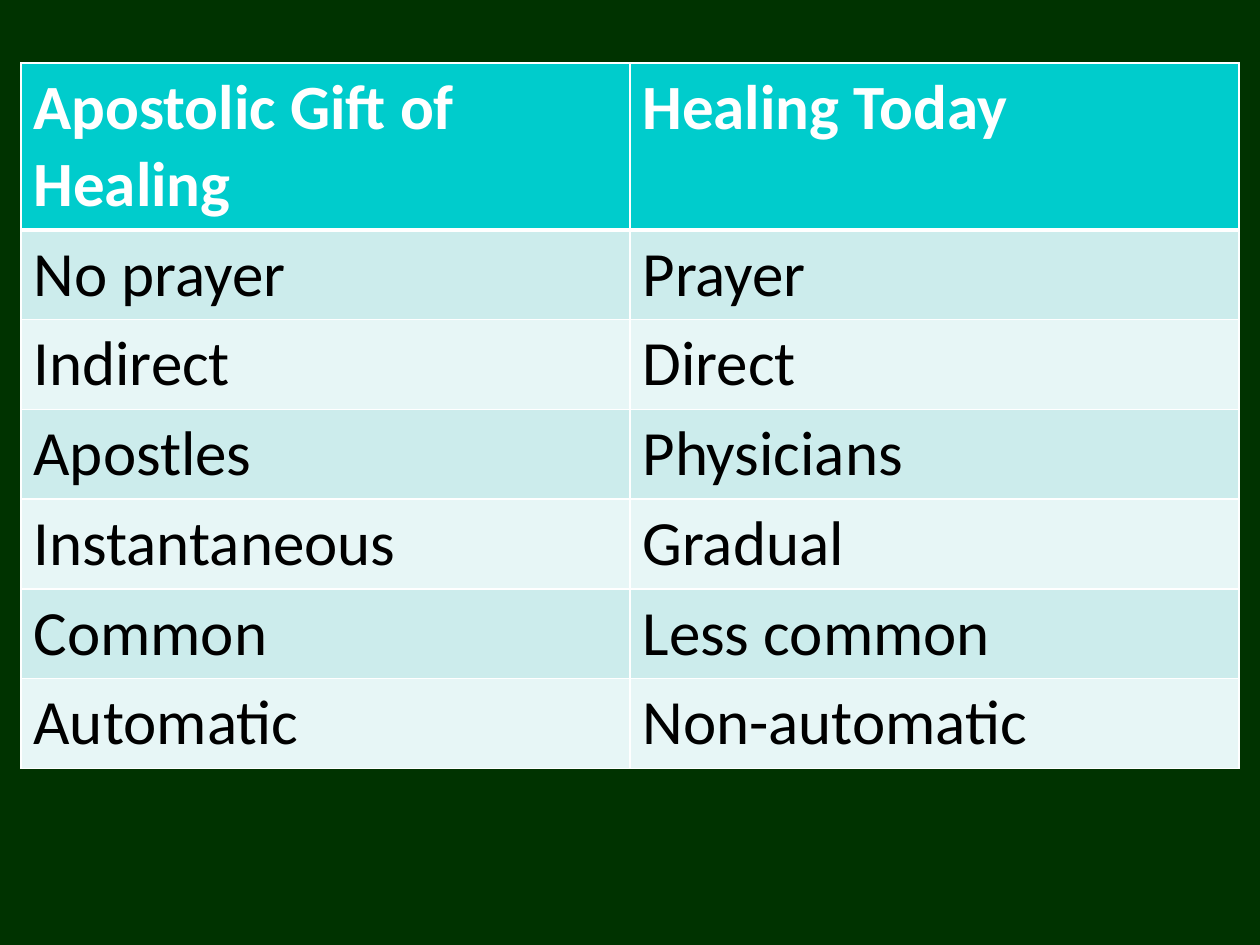
from lxml import etree
from pptx import Presentation
from pptx.dml.color import RGBColor
from pptx.oxml.ns import qn
from pptx.util import Pt

ROWS = [
    ("Apostolic Gift of Healing", "Healing Today"),
    ("No prayer", "Prayer"),
    ("Indirect", "Direct"),
    ("Apostles", "Physicians"),
    ("Instantaneous", "Gradual"),
    ("Common", "Less common"),
    ("Automatic", "Non-automatic"),
]

DARK_GREEN = RGBColor(0x00, 0x33, 0x00)
TEAL = RGBColor(0x00, 0xCC, 0xCC)
BANDS = (RGBColor(0xCC, 0xEC, 0xEC), RGBColor(0xE7, 0xF6, 0xF6))
WHITE = RGBColor(0xFF, 0xFF, 0xFF)
BLACK = RGBColor(0x00, 0x00, 0x00)

LEFT, TOP = 12, 36
COL_WIDTH = 348
HEADER_HEIGHT, ROW_HEIGHT = 95, 51
THIN, THICK = 1, 3


def set_borders(cell, top, bottom):
    """Draw white cell borders; widths are in points."""
    tc_pr = cell._tc.get_or_add_tcPr()
    widths = {"a:lnL": THIN, "a:lnR": THIN, "a:lnT": top, "a:lnB": bottom}
    for tag, width in widths.items():
        line = etree.SubElement(tc_pr, qn(tag), w=str(Pt(width)))
        fill = etree.SubElement(line, qn("a:solidFill"))
        etree.SubElement(fill, qn("a:srgbClr"), val=str(WHITE))


def fill_cell(cell, text, row):
    is_header = row == 0
    set_borders(cell, THICK if row == 1 else THIN, THICK if is_header else THIN)
    cell.fill.solid()
    cell.fill.fore_color.rgb = TEAL if is_header else BANDS[(row - 1) % 2]
    cell.text_frame.text = text
    font = cell.text_frame.paragraphs[0].runs[0].font
    font.name = "Calibri"
    font.size = Pt(36)
    font.bold = is_header
    font.color.rgb = WHITE if is_header else BLACK


prs = Presentation()
prs.slide_width, prs.slide_height = Pt(720), Pt(540)
slide = prs.slides.add_slide(prs.slide_layouts[6])
slide.background.fill.solid()
slide.background.fill.fore_color.rgb = DARK_GREEN

heights = [HEADER_HEIGHT] + [ROW_HEIGHT] * (len(ROWS) - 1)
columns = len(ROWS[0])
table = slide.shapes.add_table(
    len(ROWS), columns, Pt(LEFT), Pt(TOP), Pt(COL_WIDTH * columns), Pt(sum(heights))
).table
for column in table.columns:
    column.width = Pt(COL_WIDTH)
for r, (texts, height) in enumerate(zip(ROWS, heights)):
    table.rows[r].height = Pt(height)
    for c, text in enumerate(texts):
        fill_cell(table.cell(r, c), text, r)

prs.save("out.pptx")
